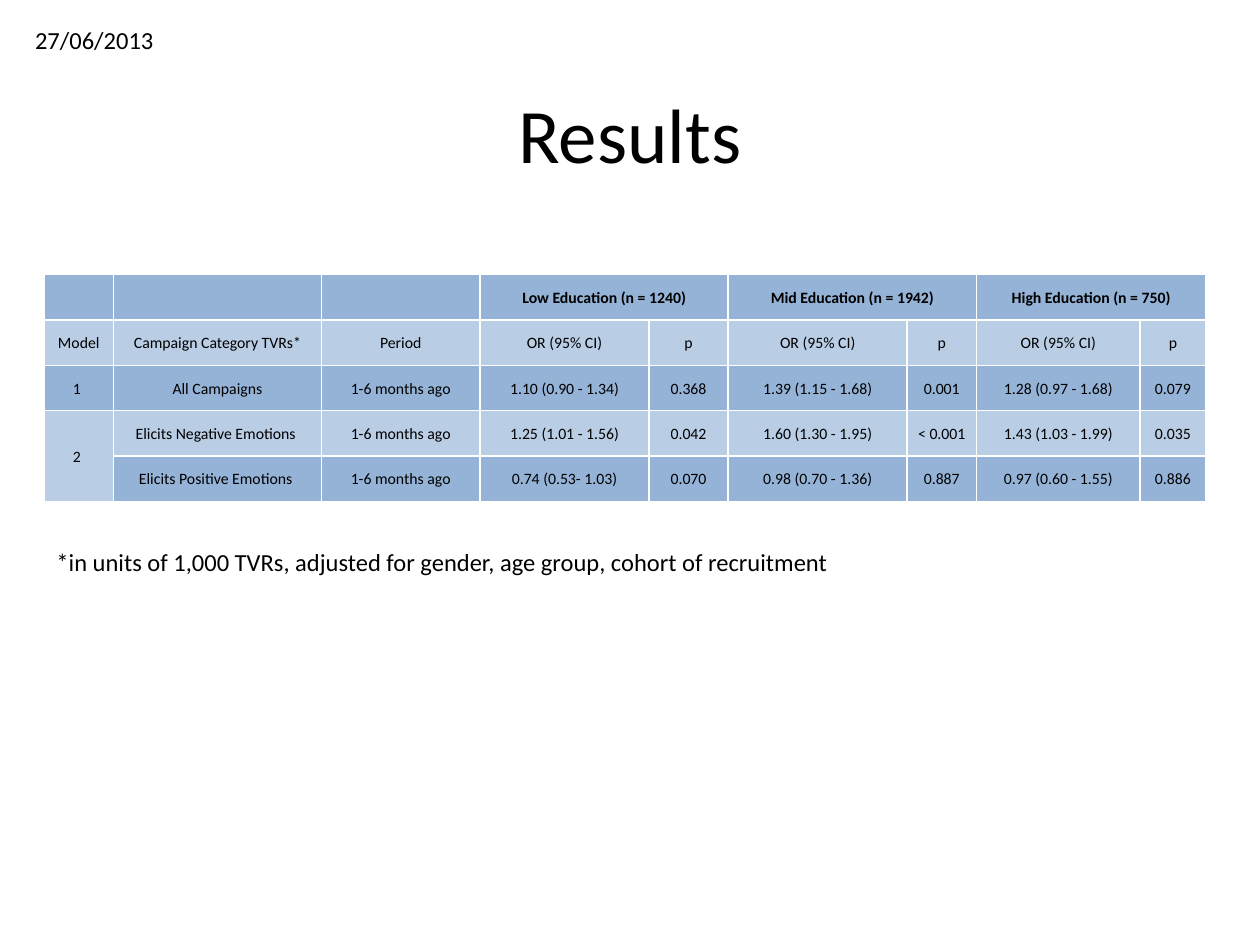
from lxml.etree import SubElement
from pptx import Presentation
from pptx.dml.color import RGBColor
from pptx.enum.text import MSO_ANCHOR as Anchor, PP_ALIGN as Align
from pptx.oxml.ns import qn
from pptx.util import Inches, Pt

FONT = "Calibri"
BLACK, WHITE = "000000", "FFFFFF"
BANDS = ("95B3D7", "B9CDE5")

COLUMN_WIDTHS = (0.55, 1.65, 1.26, 1.34, 0.63, 1.42, 0.55, 1.3, 0.52)
ROW_HEIGHT = 0.36
PERIOD = "1-6 months ago"
ROWS = (
    ("", "", "", "Low Education (n = 1240)", "", "Mid Education (n = 1942)", "",
     "High Education (n = 750)", ""),
    ("Model", "Campaign Category TVRs*", "Period") + ("OR (95% CI)", "p") * 3,
    ("1 ", "All Campaigns", PERIOD, "1.10 (0.90 - 1.34)", "0.368",
     "1.39 (1.15 - 1.68)", "0.001", "1.28 (0.97 - 1.68)", "0.079"),
    ("2 ", "Elicits Negative Emotions ", PERIOD, "1.25 (1.01 - 1.56)", "0.042",
     "1.60 (1.30 - 1.95)", "< 0.001", "1.43 (1.03 - 1.99)", "0.035"),
    ("", "Elicits Positive Emotions ", PERIOD, "0.74 (0.53- 1.03)", "0.070",
     "0.98 (0.70 - 1.36)", "0.887", "0.97 (0.60 - 1.55)", "0.886"),
)


def rgb(color):
    return RGBColor.from_string(color)


def write(frame, text, size, align=Align.LEFT, bold=False):
    frame.text = text
    paragraph = frame.paragraphs[0]
    paragraph.alignment = align
    font = paragraph.runs[0].font if paragraph.runs else paragraph.font
    font.name, font.size, font.bold = FONT, Pt(size), bold
    font.color.rgb = rgb(BLACK)


def add_title(slide, text):
    title = slide.shapes.title
    title.left, title.top = Inches(0.5), Inches(0.43)
    title.width, title.height = Inches(9), Inches(1.25)
    title.text_frame.vertical_anchor = Anchor.MIDDLE
    write(title.text_frame, text, 44, Align.CENTER)


def add_note(slide, text, left, top, width):
    note = slide.shapes.add_textbox(
        Inches(left), Inches(top), Inches(width), Inches(0.34))
    note.text_frame.word_wrap = True
    write(note.text_frame, text, 14)


def set_borders(cell, color):
    """Draw a one-point line on each side; must come before the cell's fill."""
    properties = cell._tc.get_or_add_tcPr()
    for side in ("a:lnL", "a:lnR", "a:lnT", "a:lnB"):
        line = SubElement(properties, qn(side), w=str(Pt(1)))
        fill = SubElement(line, qn("a:solidFill"))
        SubElement(fill, qn("a:srgbClr"), val=color)


def format_cell(cell, text, fill, bold):
    cell.margin_left = cell.margin_right = cell.margin_top = Inches(0.01)
    cell.margin_bottom = 0
    cell.vertical_anchor = Anchor.MIDDLE
    set_borders(cell, WHITE)
    cell.fill.solid()
    cell.fill.fore_color.rgb = rgb(fill)
    write(cell.text_frame, text, 9, Align.CENTER, bold)


def add_results_table(slide):
    table = slide.shapes.add_table(
        len(ROWS), len(COLUMN_WIDTHS), Inches(0.35), Inches(2.18),
        Inches(sum(COLUMN_WIDTHS)), Inches(ROW_HEIGHT * len(ROWS))).table
    for column, width in zip(table.columns, COLUMN_WIDTHS):
        column.width = Inches(width)
    for r, texts in enumerate(ROWS):
        table.rows[r].height = Inches(ROW_HEIGHT)
        for c, text in enumerate(texts):
            format_cell(table.cell(r, c), text, BANDS[r % 2], bold=r == 0)
    for c in (3, 5, 7):
        table.cell(0, c).merge(table.cell(0, c + 1))
    table.cell(3, 0).merge(table.cell(4, 0))


def main():
    deck = Presentation()
    deck.slide_width, deck.slide_height = Inches(10), Inches(7.5)
    slide = deck.slides.add_slide(deck.slide_layouts[5])
    add_note(slide, "27/06/2013", 0.18, 0.15, 1.81)
    add_title(slide, "Results")
    add_results_table(slide)
    add_note(slide, "*in units of 1,000 TVRs, adjusted for gender, age group, "
             "cohort of recruitment", 0.35, 4.29, 9.37)
    deck.save("out.pptx")


if __name__ == "__main__":
    main()
